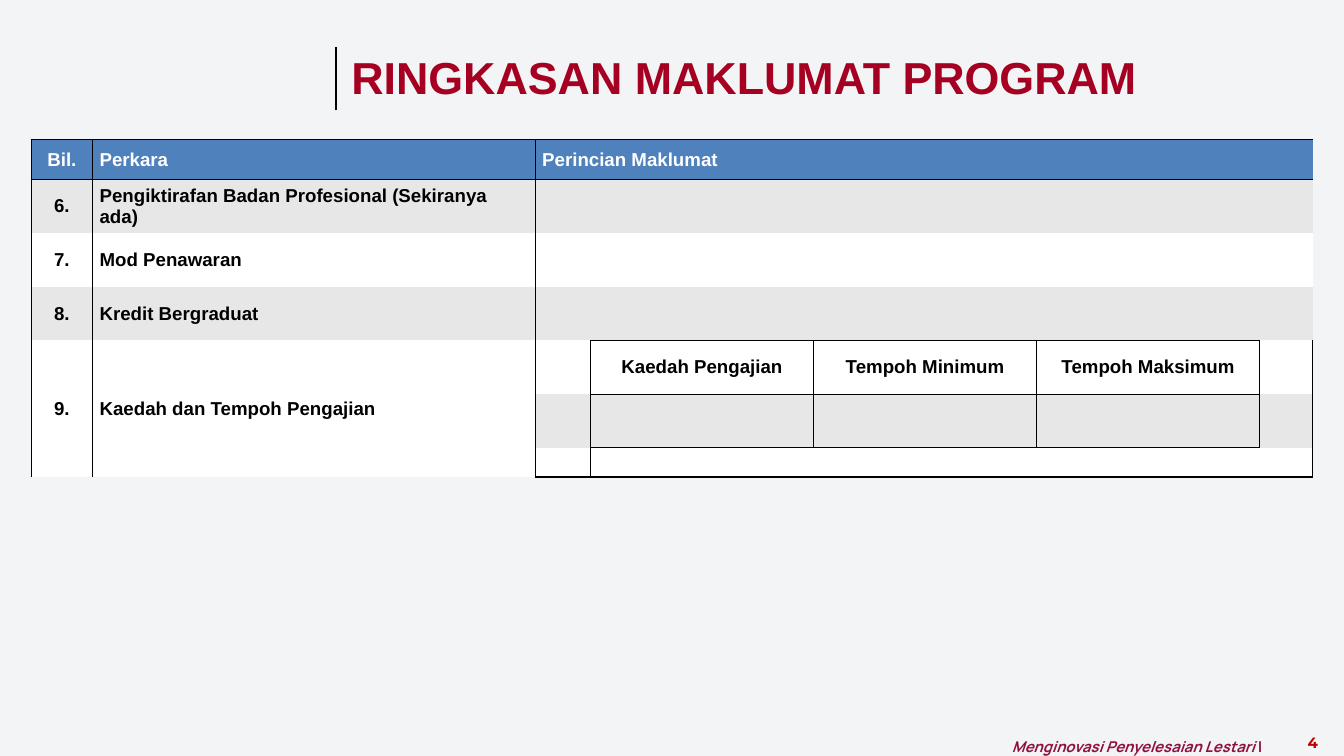
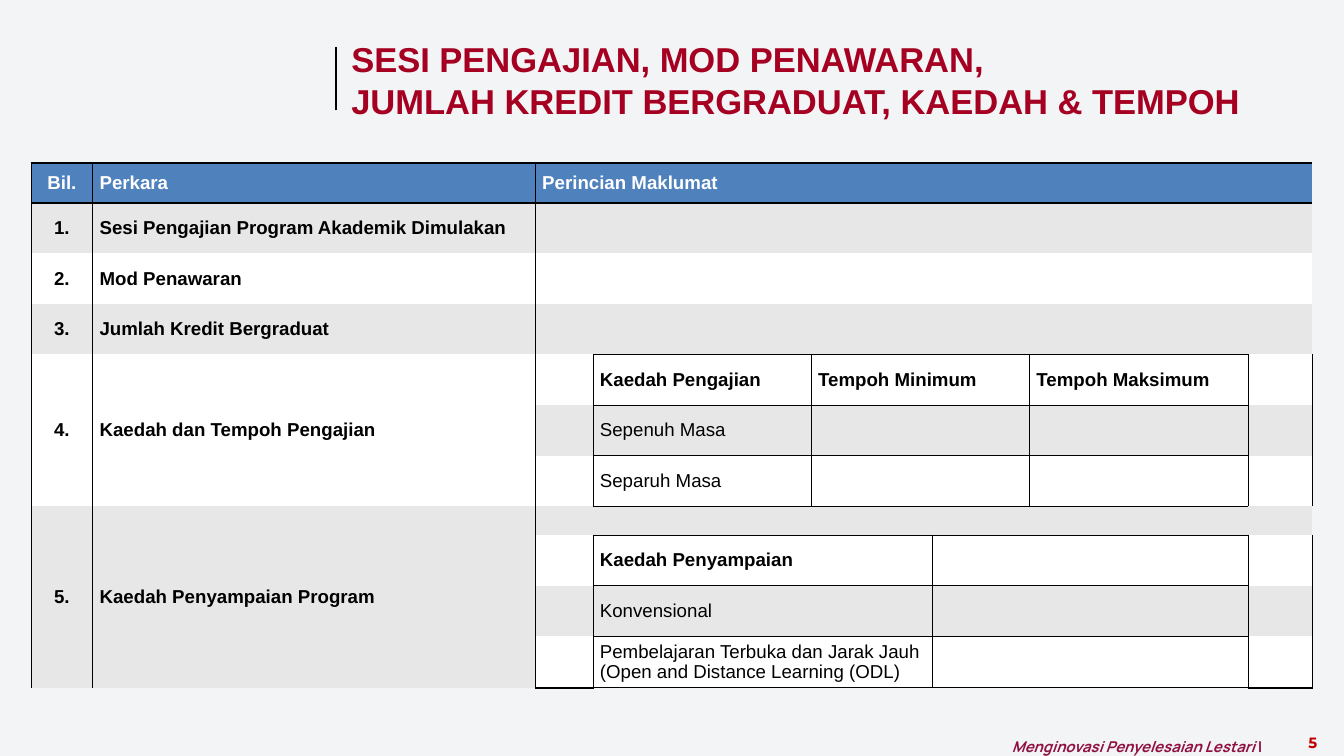
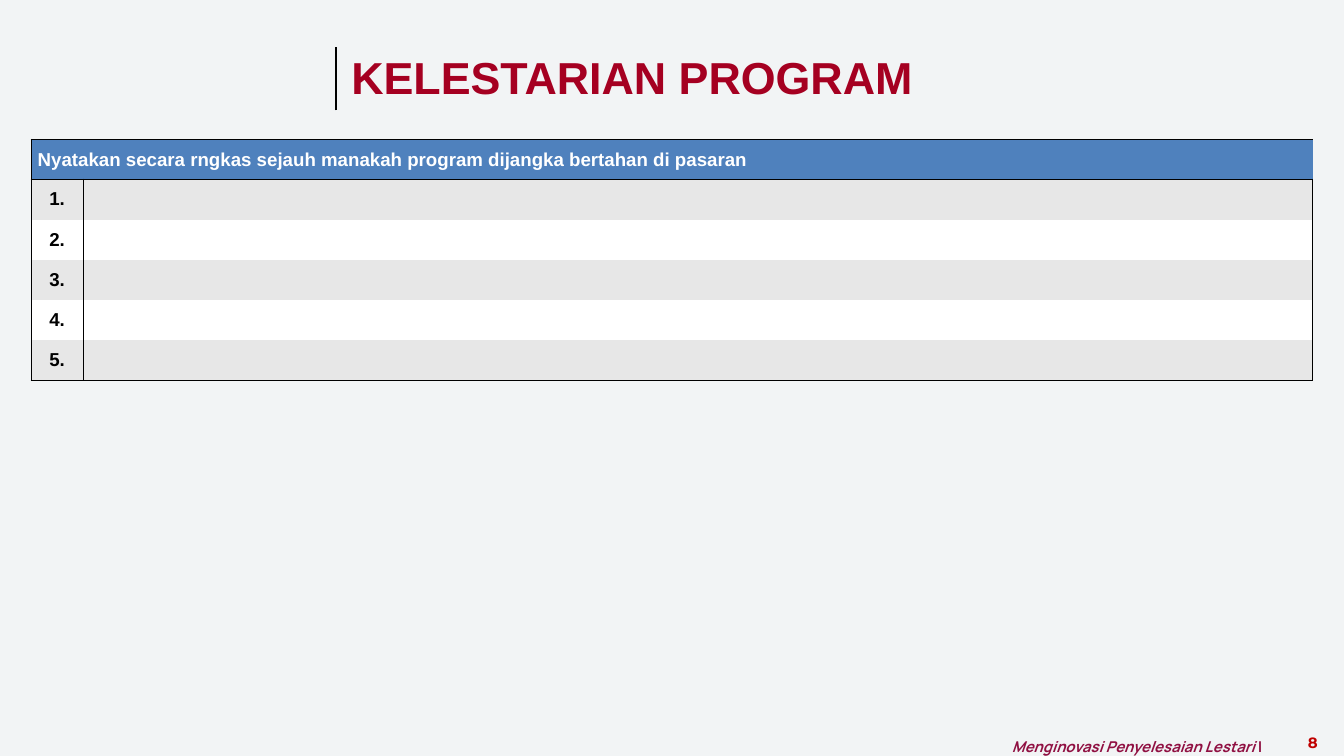
from dataclasses import dataclass

from lxml import etree
from pptx import Presentation
from pptx import util as u
from pptx.dml.color import RGBColor
from pptx.enum import shapes, text
from pptx.oxml import ns


@dataclass(frozen=True)
class Theme:
    background: str = "F2F4F5"
    ink: str = "000000"
    header: str = "4F81BD"
    header_text: str = "FFFFFF"
    bands: tuple = ("FFFFFF", "E7E7E7")
    title: str = "A50021"
    tagline: str = "901042"
    number: str = "C00000"
    body_font: str = "Arial"
    tagline_font: str = "Manrope"
    number_font: str = "Montserrat"
    title_size: int = 48
    long_title_size: int = 37
    body_size: int = 20
    footer_size: int = 16
    no_table_style: str = "{2D5ABB26-0587-4C30-8999-92F81FD0307C}"


THEME = Theme()
SLIDE = (50.8, 28.58)
TABLE_LEFT, TABLE_WIDTH = 1.17, 48.44
HEADER_HEIGHT, SPACER_HEIGHT = 1.5, 1.1

# Cell borders: edge letter to width in points
SIDES = {"L": 1, "R": 1}
HEADING = {"L": 1, "R": 1, "T": 2, "B": 2}
CLOSING = {"L": 1, "R": 1, "B": 2}
FRAME = dict.fromkeys("LRTB", 1)
UNDER_FRAME = {"T": 1, "B": 2.25}


@dataclass
class Cell:
    text: str = ""
    rows: int = 1
    cols: int = 1
    edges: dict = None
    bold: bool = True
    centred: bool = False


def write(paragraph, words, *, size=THEME.body_size, color=THEME.ink,
          font=THEME.body_font, bold=True, italic=False, centred=False):
    """Add formatted words to a paragraph."""
    if centred:
        paragraph.alignment = text.PP_ALIGN.CENTER
    run = paragraph.add_run()
    run.text = words
    run.font.size = u.Pt(size)
    run.font.name = font
    run.font.bold = bold
    run.font.italic = italic
    run.font.color.rgb = RGBColor.from_string(color)


def text_area(slide, box, margin=None):
    frame = slide.shapes.add_textbox(*map(u.Cm, box)).text_frame
    frame.word_wrap = True
    if margin is not None:
        frame.margin_left = frame.margin_right = u.Cm(margin)
        frame.margin_top = frame.margin_bottom = u.Cm(margin)
    return frame


def add_footer(slide, box, number):
    left, top, width, height = box
    number_width = 2.36

    # Tagline
    tagline = text_area(slide, (left, top, 10.67, height), margin=0)
    tagline.auto_size = text.MSO_AUTO_SIZE.SHAPE_TO_FIT_TEXT
    motto = tagline.paragraphs[0]
    motto.line_spacing = 1.4
    style = dict(size=THEME.footer_size, color=THEME.tagline, font=THEME.tagline_font)
    write(motto, "Menginovasi Penyelesaian Lestari ", italic=True, **style)
    write(motto, "|", **style)

    # Page number
    page = text_area(slide, (left + width - number_width, top, number_width, height))
    page.auto_size = text.MSO_AUTO_SIZE.SHAPE_TO_FIT_TEXT
    write(page.paragraphs[0], str(number), size=THEME.footer_size,
          color=THEME.number, font=THEME.number_font, centred=True)


def add_title(slide, box, lines, size):
    left, top, width, height = box

    # Upright rule
    rule = slide.shapes.add_connector(
        shapes.MSO_CONNECTOR.STRAIGHT,
        u.Cm(12.7), u.Cm(4.17), u.Cm(12.7), u.Cm(1.78))
    rule.line.width = u.Pt(3)
    rule.line.color.rgb = RGBColor.from_string(THEME.ink)
    etree.SubElement(rule._element.spPr, ns.qn("a:effectLst"))

    # Title lines
    frame = text_area(slide, (left, top, width, height))
    for index, line in enumerate(lines):
        paragraph = frame.add_paragraph() if index else frame.paragraphs[0]
        write(paragraph, line, size=size, color=THEME.title)


def set_borders(table_cell, edges):
    properties = table_cell._tc.get_or_add_tcPr()
    for edge in "LRTB":
        if edge in edges:
            line = etree.SubElement(properties, ns.qn(f"a:ln{edge}"),
                                    w=str(u.Pt(edges[edge])))
            fill = etree.SubElement(line, ns.qn("a:solidFill"))
            etree.SubElement(fill, ns.qn("a:srgbClr"), val=THEME.ink)


def fill_cell(table, row, col, cell):
    """Merge, outline, colour and fill in the area that starts at row, col."""
    last_row, last_col = row + cell.rows - 1, col + cell.cols - 1
    heading = row == 0
    edges = cell.edges or (HEADING if heading else SIDES)
    shade = THEME.header if heading else THEME.bands[row % 2]
    area = [(r, c) for r in range(row, last_row + 1) for c in range(col, last_col + 1)]
    origin = table.cell(row, col)
    if len(area) > 1:
        origin.merge(table.cell(last_row, last_col))
    for r, c in area:
        outer = {"L": c == col, "R": c == last_col, "T": r == row, "B": r == last_row}
        part = table.cell(r, c)
        set_borders(part, {e: w for e, w in edges.items() if outer[e]})
        part.fill.solid()
        part.fill.fore_color.rgb = RGBColor.from_string(shade)
    origin.vertical_anchor = text.MSO_ANCHOR.MIDDLE
    if cell.text:
        write(origin.text_frame.paragraphs[0], cell.text, bold=cell.bold,
              centred=cell.centred,
              color=THEME.header_text if heading else THEME.ink)
    return area


def add_grid(slide, top, widths, heights, rows):
    """Place the cells in reading order; the last column takes the rest."""
    widths = widths + [TABLE_WIDTH - sum(widths)]
    frame = slide.shapes.add_table(
        len(heights), len(widths), u.Cm(TABLE_LEFT), u.Cm(top),
        u.Cm(TABLE_WIDTH), u.Cm(sum(heights)))
    table = frame.table
    table._tbl.tblPr.find(ns.qn("a:tableStyleId")).text = THEME.no_table_style
    for column, width in zip(table.columns, widths):
        column.width = u.Cm(width)
    for table_row, height in zip(table.rows, heights):
        table_row.height = u.Cm(height)

    taken = set()
    for row, cells in enumerate(rows):
        pending = iter(cells)
        for col in range(len(widths)):
            if (row, col) not in taken:
                taken.update(fill_cell(table, row, col, next(pending)))


def number_cell(number, **options):
    return Cell(f"{number}.", centred=True, **options)


def item_rows(first, items, detail_cols):
    return [[number_cell(number), Cell(item), Cell(cols=detail_cols)]
            for number, item in enumerate(items, first)]


def heading_row(detail_cols):
    return [Cell("Bil.", centred=True), Cell("Perkara"),
            Cell("Perincian Maklumat", cols=detail_cols)]


def start_slide(deck, number, lines, title_box=(13.03, 1.75, 32.46, 3.18),
                title_size=THEME.title_size):
    slide = deck.slides.add_slide(deck.slide_layouts[6])
    slide.background.fill.solid()
    slide.background.fill.fore_color.rgb = RGBColor.from_string(THEME.background)
    add_footer(slide, (38.25, 27.61, 12.55, 0.95), number)
    add_title(slide, title_box, lines, title_size)
    return slide


def summary_slide(deck):
    slide = start_slide(deck, 4, ["RINGKASAN MAKLUMAT PROGRAM"])
    methods = ["Kaedah Pengajian", "Tempoh Minimum", "Tempoh Maksimum"]
    rows = [
        heading_row(5),
        *item_rows(6, ["Pengiktirafan Badan Profesional (Sekiranya ada)",
                       "Mod Penawaran", "Kredit Bergraduat"], 5),
        # Study methods and durations
        [number_cell(9, rows=3, edges=CLOSING),
         Cell("Kaedah dan Tempoh Pengajian", rows=3, edges=CLOSING),
         Cell(), *(Cell(m, edges=FRAME, centred=True) for m in methods), Cell()],
        [Cell(), *(Cell(edges=FRAME) for _ in methods), Cell()],
        [Cell(edges={"L": 1, "B": 2}), *(Cell(edges=UNDER_FRAME) for _ in methods),
         Cell(edges={"R": 1, "B": 2})],
    ]
    add_grid(slide, 5.28, [2.34, 16.73, 2.08] + [8.43] * 3,
             [HEADER_HEIGHT] + [2.03] * 5 + [SPACER_HEIGHT], rows)


def duration_row(method, shortest="", longest="", bold=False):
    return [Cell(), Cell(method, edges=FRAME, bold=bold),
            Cell(shortest, cols=2, edges=FRAME), Cell(longest, edges=FRAME), Cell()]


def delivery_row(method, bold=False, edges=SIDES):
    return [Cell(edges=edges), Cell(method, cols=2, edges=FRAME, bold=bold),
            Cell(cols=2, edges=FRAME), Cell(edges=edges)]


def session_slide(deck):
    slide = start_slide(
        deck, 5, ["SESI PENGAJIAN, MOD PENAWARAN,",
                  "JUMLAH KREDIT BERGRADUAT, KAEDAH & TEMPOH"],
        (13.03, 1.32, 36.27, 3.68), THEME.long_title_size)
    rows = [
        heading_row(6),
        *item_rows(1, ["Sesi Pengajian Program Akademik Dimulakan",
                       "Mod Penawaran", "Jumlah Kredit Bergraduat"], 6),
        # Study methods and durations
        [number_cell(4, rows=3), Cell("Kaedah dan Tempoh Pengajian", rows=3),
         *duration_row("Kaedah Pengajian", "Tempoh Minimum", "Tempoh Maksimum",
                       bold=True)],
        duration_row("Sepenuh Masa"),
        duration_row("Separuh Masa"),
        # Delivery methods
        [number_cell(5, rows=4, edges=CLOSING),
         Cell("Kaedah Penyampaian Program", rows=4, edges=CLOSING), Cell(cols=6)],
        delivery_row("Kaedah Penyampaian", bold=True),
        delivery_row("Konvensional"),
        delivery_row("Pembelajaran Terbuka dan Jarak Jauh "
                     "(Open and Distance Learning (ODL)", edges=CLOSING),
    ]
    add_grid(slide, 6.17, [2.34, 16.73, 2.18, 8.25, 4.57, 3.68, 8.25],
             [HEADER_HEIGHT] + [1.91] * 6 + [SPACER_HEIGHT] + [1.91] * 3, rows)


def sustainability_slide(deck):
    slide = start_slide(deck, 8, ["KELESTARIAN PROGRAM"])
    points = 5
    rows = [[Cell("Nyatakan secara rngkas sejauh manakah program dijangka "
                  "bertahan di pasaran", cols=2)]]
    for point in range(1, points + 1):
        edges = CLOSING if point == points else SIDES
        rows.append([number_cell(point, edges=edges), Cell(edges=edges)])
    add_grid(slide, 5.28, [1.98], [HEADER_HEIGHT] + [1.52] * points, rows)


def main():
    deck = Presentation()
    deck.slide_width, deck.slide_height = map(u.Cm, SLIDE)
    summary_slide(deck)
    session_slide(deck)
    sustainability_slide(deck)
    deck.save("out.pptx")


if __name__ == "__main__":
    main()
